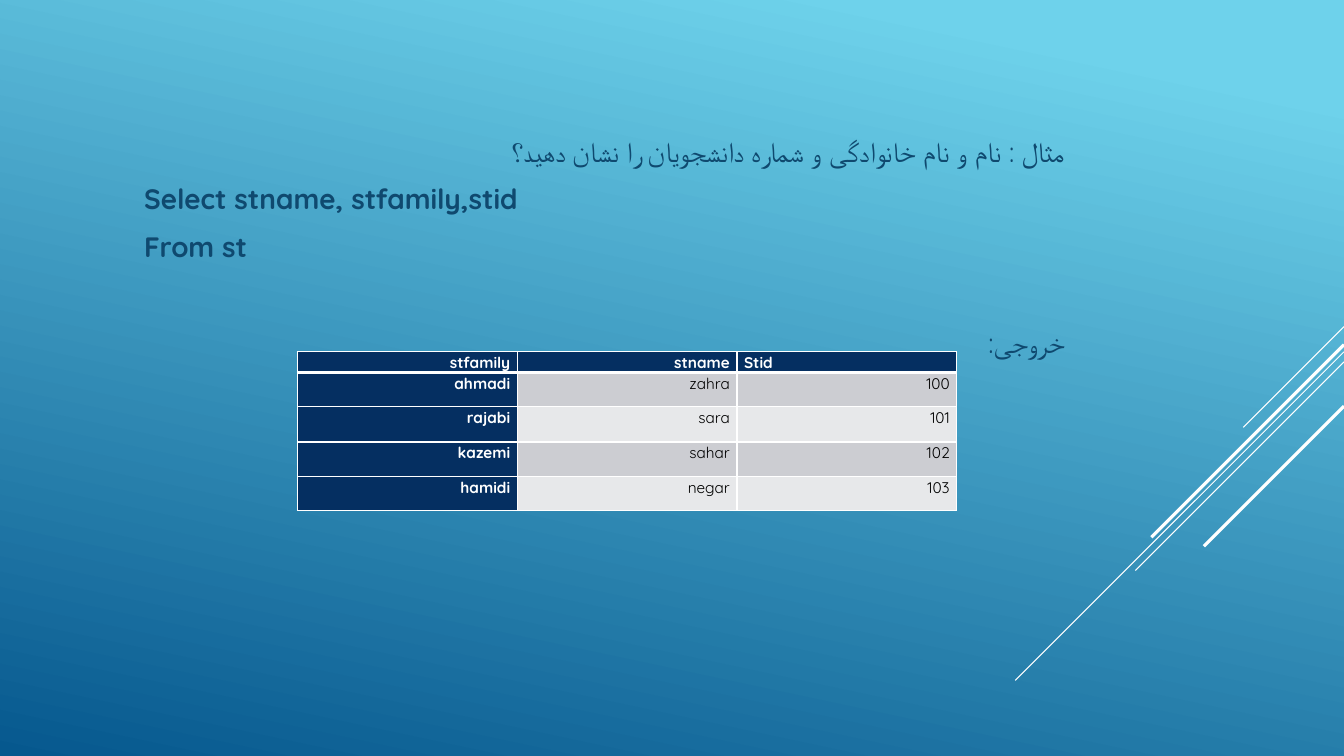
from lxml import etree
from pptx import Presentation
from pptx.dml.color import RGBColor
from pptx.enum import shapes, text
from pptx.oxml import ns
from pptx.util import Inches, Pt

# Content
FONT = "Quicksand"
COLORS = {"sky": "6ED2EB", "deep": "06588E", "ink": "0F496F", "navy": "052F61",
          "band": "CCCDD2", "pale": "E7E8EA", "white": "FFFFFF", "black": "000000"}
# wording, right to left, space before in points
STATEMENT = [
    ("مثال : نام و نام خانوادگی و شماره دانشجویان را نشان دهید؟", True, 0),
    ("Select stname, stfamily,stid", False, 4),
    ("From st", False, 4),
    ("خروجی:", True, 38.5),
]
OUTPUT = [
    ("stfamily", "stname", "Stid"),
    ("ahmadi", "zahra", "100"),
    ("rajabi", "sara", "101"),
    ("kazemi", "sahar", "102"),
    ("hamidi", "negar", "103"),
]
ROW_HEIGHTS = [0.17, 0.34, 0.35, 0.34, 0.34]
COLUMN_WIDTH = 2.18
# height at the right edge, run down to the left, weight in points
STREAKS = [(3.24, 1.0, 0.75), (3.49, 3.26, 0.75), (3.59, 2.07, 0.75),
           (3.42, 1.91, 2.25), (4.03, 1.39, 2.25)]
SLIDE_WIDTH, SLIDE_HEIGHT = 13.33, 7.5


def rgb(name):
    return RGBColor.from_string(COLORS[name])


def apply(target, **values):
    for key, value in values.items():
        setattr(target, key, value)


def write(paragraph, wording, size, color, bold):
    run = paragraph.add_run()
    run.text = wording
    apply(run.font, name=FONT, size=Pt(size), bold=bold)
    run.font.color.rgb = rgb(color)
    etree.SubElement(run.font._element, ns.qn("a:cs"), typeface=FONT)


def add_border(cell, side, weight):
    edge = etree.SubElement(cell._tc.get_or_add_tcPr(), ns.qn(f"a:ln{side}"),
                            w=str(Pt(weight)))
    fill = etree.SubElement(edge, ns.qn("a:solidFill"))
    etree.SubElement(fill, ns.qn("a:srgbClr"), val=COLORS["white"])


prs = Presentation()
apply(prs, slide_width=Inches(SLIDE_WIDTH), slide_height=Inches(SLIDE_HEIGHT))
slide = prs.slides.add_slide(prs.slide_layouts[1])
heading = slide.shapes.title._element
heading.getparent().remove(heading)

# Background
backdrop = slide.background.fill
backdrop.gradient()
backdrop.gradient_angle = 360 - 102
for stop, (position, color) in zip(backdrop.gradient_stops, [(0.1, "sky"), (1, "deep")]):
    stop.position = position
    stop.color.rgb = rgb(color)

# Diagonal streaks at 45 degrees
for top, run_length, weight in STREAKS:
    streak = slide.shapes.add_connector(
        shapes.MSO_CONNECTOR.STRAIGHT, Inches(SLIDE_WIDTH), Inches(top),
        Inches(SLIDE_WIDTH - run_length), Inches(top + run_length))
    streak.line.color.rgb = rgb("white")
    streak.line.width = Pt(weight)
    etree.SubElement(streak._element.spPr, ns.qn("a:effectLst"))

# Question and query
statement = slide.placeholders[1]
apply(statement, left=Inches(1.33), top=Inches(0.72),
      width=Inches(9.33), height=Inches(4.79))
frame = statement.text_frame
apply(frame, word_wrap=True, auto_size=text.MSO_AUTO_SIZE.NONE,
      vertical_anchor=text.MSO_ANCHOR.TOP, margin_top=Inches(0.61))
for number, (wording, rtl, before) in enumerate(STATEMENT):
    paragraph = frame.add_paragraph() if number else frame.paragraphs[0]
    apply(paragraph, space_before=Pt(before), space_after=Pt(6),
          alignment=text.PP_ALIGN.JUSTIFY if rtl else text.PP_ALIGN.LEFT)
    layout = paragraph._p.get_or_add_pPr()
    for key, value in {"marL": "0", "indent": "0", "rtl": str(int(rtl))}.items():
        layout.set(key, value)
    etree.SubElement(layout, ns.qn("a:buNone"))
    write(paragraph, wording, 20, "ink", not rtl)

# Output table
columns = len(OUTPUT[0])
table = slide.shapes.add_table(
    len(OUTPUT), columns, Inches(2.95), Inches(3.49),
    Inches(COLUMN_WIDTH * columns), Inches(sum(ROW_HEIGHTS))).table
for column in table.columns:
    column.width = Inches(COLUMN_WIDTH)
for r, (record, height) in enumerate(zip(OUTPUT, ROW_HEIGHTS)):
    table.rows[r].height = Inches(height)
    for c, wording in enumerate(record):
        cell = table.cell(r, c)
        strong = r == 0 or c == 0
        apply(cell, margin_left=Inches(0.07), margin_right=Inches(0.07),
              margin_top=0, margin_bottom=0)
        for side in "LRTB":
            heavy = (r, side) in [(0, "B"), (1, "T")]
            add_border(cell, side, 3 if heavy else 1)
        cell.fill.solid()
        cell.fill.fore_color.rgb = rgb("navy" if strong else "band" if r % 2 else "pale")
        paragraph = cell.text_frame.paragraphs[0]
        apply(paragraph, line_spacing=1.07, alignment=text.PP_ALIGN.LEFT
              if wording == "Stid" else text.PP_ALIGN.RIGHT)
        write(paragraph, wording, 11, "white" if strong else "black", strong)

prs.save("out.pptx")
